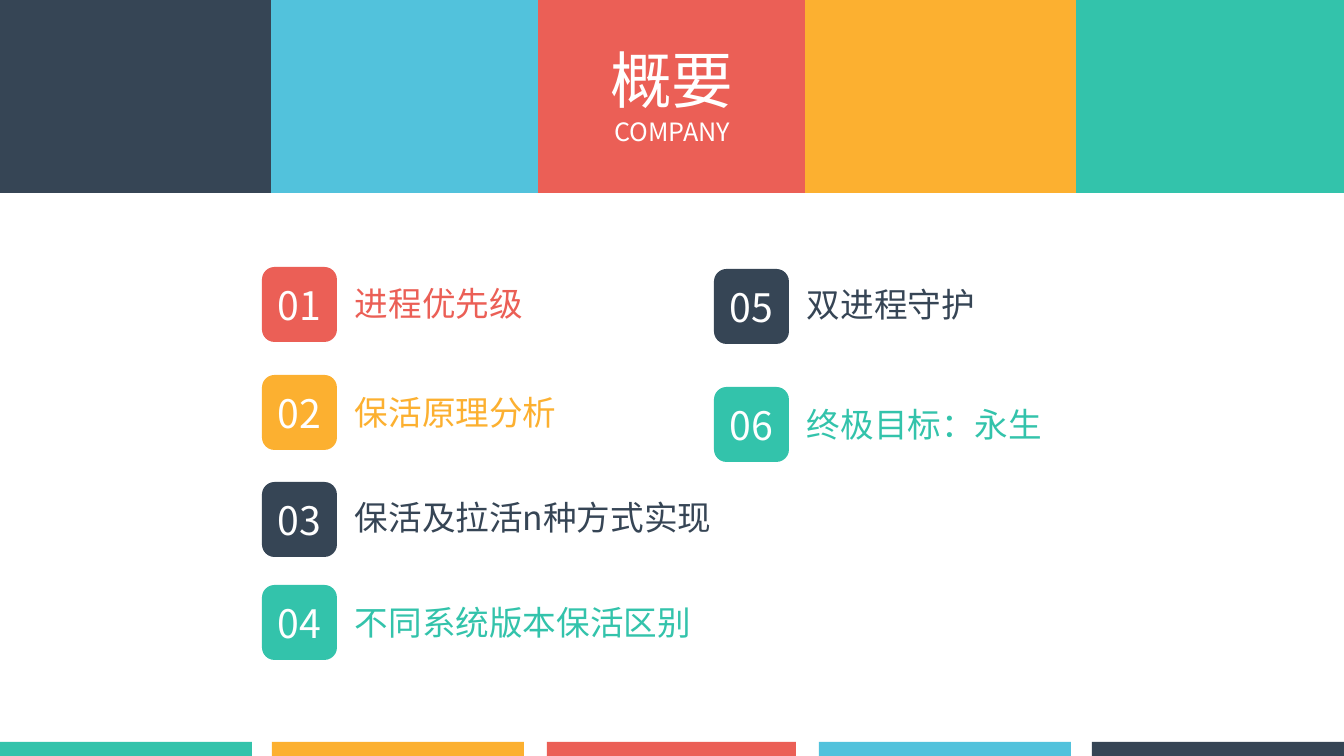
import pptx
import pptx.dml.color
import pptx.enum.shapes
import pptx.enum.text
import pptx.oxml
import pptx.oxml.ns
import pptx.util

# Content: all lengths in px
TITLE = [("概要", "title"), ("COMPANY", "subtitle")]
TITLE_BOX = (598, 37, 148, 115)

HEADER_TOP, HEADER_HEIGHT = 0, 193
HEADER = [  # colour, left, width
    ("navy", 0, 271),
    ("sky", 267, 271),
    ("coral", 537, 268),
    ("amber", 805, 271),
    ("teal", 1072, 272),
]
FOOTER_TOP, FOOTER_HEIGHT = 742, 14
FOOTER = [
    ("teal", 0, 252),
    ("amber", 272, 252),
    ("coral", 547, 249),
    ("sky", 819, 252),
    ("navy", 1092, 252),
]

AGENDA = {  # column left: (label, colour, badge top, label top, label width)
    262: [
        ("进程优先级", "coral", 267, 278, 727),
        ("保活原理分析", "amber", 375, 387, 558),
        ("保活及拉活n种方式实现", "navy", 482, 492, 506),
        ("不同系统版本保活区别", "teal", 585, 597, 523),
    ],
    714: [
        ("双进程守护", "navy", 269, 279, 506),
        ("终极目标：永生", "teal", 387, 399, 523),
    ],
}
BADGE_SIZE, LABEL_OFFSET, LABEL_HEIGHT = 75, 83, 50


class Theme:
    font = "Noto Sans CJK SC"
    colors = {"navy": "364555", "sky": "52C2DC", "coral": "EB5F56",
              "amber": "FCB030", "teal": "33C3AB", "white": "FFFFFF"}
    sizes = {"title": 44, "subtitle": 18, "badge": 28, "label": 24}


PAGE_WIDTH, PAGE_HEIGHT = 1344, 756
EMU_PER_PX = 914400 / 100.8
SHAPES = pptx.enum.shapes.MSO_SHAPE
ALIGN = pptx.enum.text.PP_ALIGN


def px(length):
    return pptx.util.Emu(round(length * EMU_PER_PX))


def color(name):
    return pptx.dml.color.RGBColor.from_string(Theme.colors[name])


def add_block(shapes, kind, fill, *bounds):
    block = shapes.add_shape(kind, *map(px, bounds))
    block.shadow.inherit = False
    block.fill.solid()
    block.fill.fore_color.rgb = color(fill)
    block.line.fill.background()
    return block


def write(frame, lines, fill, align):
    for number, (text, size) in enumerate(lines):
        para = frame.add_paragraph() if number else frame.paragraphs[0]
        para.alignment = align
        span = para.add_run()
        span.text = text
        span.font.size = pptx.util.Pt(Theme.sizes[size])
        span.font.name = Theme.font
        span.font.color.rgb = color(fill)
        east_asian = pptx.oxml.parse_xml(
            f'<a:ea {pptx.oxml.ns.nsdecls("a")} typeface="{Theme.font}"/>')
        span.font._element.find(pptx.oxml.ns.qn("a:latin")).addnext(east_asian)


def add_text(shapes, bounds, lines, fill, align, wrap):
    box = shapes.add_textbox(*map(px, bounds))
    box.text_frame.word_wrap = wrap
    box.text_frame.auto_size = pptx.enum.text.MSO_AUTO_SIZE.SHAPE_TO_FIT_TEXT
    write(box.text_frame, lines, fill, align)


def add_entry(page, number, left, entry):
    label, fill, badge_top, label_top, label_width = entry
    shapes = page.shapes.add_group_shape().shapes
    badge = add_block(shapes, SHAPES.ROUNDED_RECTANGLE, fill,
                      left, badge_top, BADGE_SIZE, BADGE_SIZE)
    badge.text_frame.vertical_anchor = pptx.enum.text.MSO_ANCHOR.MIDDLE
    write(badge.text_frame, [(f"{number:02d}", "badge")], "white", ALIGN.CENTER)
    add_text(shapes, (left + LABEL_OFFSET, label_top, label_width, LABEL_HEIGHT),
             [(label, "label")], fill, ALIGN.LEFT, True)


def main():
    deck = pptx.Presentation()
    deck.slide_width, deck.slide_height = px(PAGE_WIDTH), px(PAGE_HEIGHT)
    page = deck.slides.add_slide(deck.slide_layouts[6])

    # Header: drawn right to left, so each block overlaps its right neighbour
    for fill, left, width in reversed(HEADER):
        add_block(page.shapes, SHAPES.RECTANGLE, fill,
                  left, HEADER_TOP, width, HEADER_HEIGHT)
    add_text(page.shapes, TITLE_BOX, TITLE, "white", ALIGN.CENTER, False)

    # Footer strips
    for fill, left, width in FOOTER:
        add_block(page.shapes, SHAPES.RECTANGLE, fill,
                  left, FOOTER_TOP, width, FOOTER_HEIGHT)

    # Agenda, numbered down each column in turn
    entries = [(left, entry) for left, column in AGENDA.items() for entry in column]
    for number, (left, entry) in enumerate(entries, 1):
        add_entry(page, number, left, entry)

    deck.save("out.pptx")


if __name__ == "__main__":
    main()
